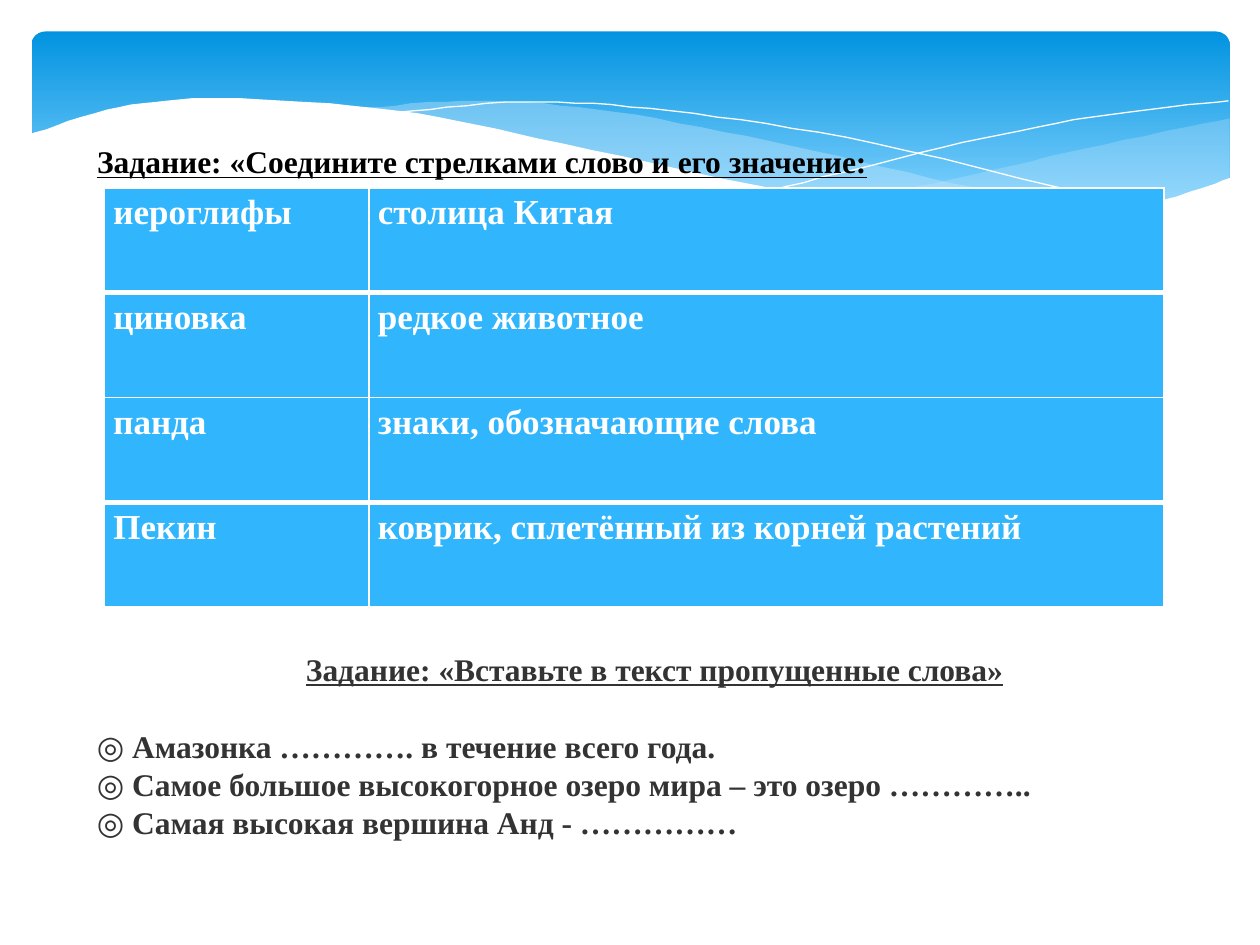
"""Build a quiz slide with a matching table, a gap-fill list and a wave banner."""
from dataclasses import dataclass
from typing import Optional

from lxml import etree
from pptx import Presentation
from pptx.dml.color import RGBColor
from pptx.enum import shapes as kinds, text as txt
from pptx.oxml import ns
from pptx.util import Inches, Pt

COLORS = {"top": "0293E0", "low": "83D3FE", "mist": "C6E7FC", "white": "FFFFFF",
          "cell": "31B6FD", "black": "000000", "gray": "333333"}
FONT = "Times New Roman"
UNIT = Inches(0.01)
STEPS = 8


@dataclass
class Wave:
    """Smooth arcs through knots in hundredths of an inch."""
    arcs: list
    fill: Optional[str] = None
    alpha: int = 100


@dataclass
class Note:
    """A text block: each line is a list of (text, format) runs."""
    box: tuple
    lines: list
    align: object = txt.PP_ALIGN.LEFT


WAVES = [
    Wave([[(976, 94), (861, 118), (753, 143), (661, 160)],
          [(661, 160), (757, 170), (854, 170), (921, 160), (976, 141)]], "mist", 29),
    Wave([[(893, 167), (775, 149), (629, 116), (489, 89), (380, 80), (286, 86)],
          [(286, 86), (404, 106), (566, 143), (695, 165), (807, 173), (893, 167)]], "mist", 40),
    Wave([[(309, 90), (416, 81), (533, 88), (695, 114), (907, 166)]]),
    Wave([[(613, 151), (748, 117), (866, 93), (975, 80)]]),
    Wave([[(977, 141), (899, 164), (793, 171), (648, 156), (447, 114), (316, 88),
           (177, 78), (95, 85), (23, 107)], [(23, 224), (977, 224)]], "white"),
]
PAIRS = [("иероглифы", "столица Китая"), ("циновка", "редкое животное"),
         ("панда", "знаки, обозначающие слова"),
         ("Пекин", "коврик, сплетённый из корней растений")]
GAPS = ["Амазонка …………. в течение всего года.",
        "Самое большое высокогорное озеро мира – это озеро …………..",
        "Самая высокая вершина Анд - ……………"]
HEAD = {"bold": True, "underline": True}
TITLE = Note((0.67, 1.08, 6.42, 0.4),
             [[("Задание: «Соедините стрелками слово и его значение:", HEAD)]],
             txt.PP_ALIGN.JUSTIFY)
NOTES = [
    Note((2.33, 5.11, 7.17, 0.4), [[("Задание: «Вставьте в текст пропущенные слова»", HEAD)]]),
    Note((0.67, 5.72, 8.67, 1.01),
         [[("◎ ", {"bold": False}), (gap, {"bold": True})] for gap in GAPS]),
]


def rgb(name: str) -> RGBColor:
    """Look up a colour."""
    return RGBColor.from_string(COLORS[name])


def style(font, color: str, size: int, form: dict) -> None:
    """Format a font."""
    for key, val in {"name": FONT, "size": Pt(size), **form}.items():
        setattr(font, key, val)
    font.color.rgb = rgb(color)


def place(shape, box: tuple) -> None:
    """Move and size a shape."""
    for key, val in zip(("left", "top", "width", "height"), box):
        setattr(shape, key, Inches(val))


def banner(slide) -> None:
    """Draw the rounded gradient band."""
    band = slide.shapes.add_shape(kinds.MSO_SHAPE.ROUNDED_RECTANGLE,
                                  *map(Inches, (0.25, 0.25, 9.51, 1.56)))
    band.adjustments[0] = 0.07
    band.shadow.inherit = False
    band.line.fill.background()
    band.fill.gradient()
    band.fill.gradient_angle = 270
    for stop, name, pos in zip(band.fill.gradient_stops, ("top", "low"), (0, 0.9)):
        stop.color.rgb = rgb(name)
        stop.position = pos


def blend(a: float, b: float, c: float, d: float, t: float) -> float:
    """Give the Catmull-Rom value between b and c."""
    return b + t / 2 * (c - a + t * (2 * a - 5 * b + 4 * c - d + t * (3 * (b - c) + d - a)))


def smooth(knots: list) -> list:
    """Sample a curve that passes through the knots."""
    ends = [knots[0], *knots, knots[-1]]
    pts = [tuple(blend(*axis, step / STEPS) for axis in zip(*quad))
           for quad in zip(ends, ends[1:], ends[2:], ends[3:]) for step in range(STEPS)]
    return pts + [knots[-1]]


def wave(slide, item: Wave) -> None:
    """Draw a filled wave or a thin white curve."""
    pts = [pt for arc in item.arcs for pt in smooth(arc)]
    pen = slide.shapes.build_freeform(*pts[0], scale=UNIT)
    pen.add_line_segments(pts[1:], close=bool(item.fill))
    shape = pen.convert_to_shape()
    shape.shadow.inherit = False
    if not item.fill:
        shape.fill.background()
        shape.line.color.rgb = rgb("white")
        shape.line.width = 0
        return
    shape.line.fill.background()
    shape.fill.solid()
    shape.fill.fore_color.rgb = rgb(item.fill)
    if item.alpha < 100:
        tone = shape._element.spPr.find(".//" + ns.qn("a:srgbClr"))
        etree.SubElement(tone, ns.qn("a:alpha"), val=str(item.alpha * 1000))


def edge(cell, side: str, width: int) -> None:
    """Give one side of a cell a white border."""
    line = etree.SubElement(cell._tc.get_or_add_tcPr(), ns.qn("a:ln" + side),
                            w=str(Pt(width)))
    fill = etree.SubElement(line, ns.qn("a:solidFill"))
    etree.SubElement(fill, ns.qn("a:srgbClr"), val=COLORS["white"])


def grid(slide) -> None:
    """Draw the table of words and meanings."""
    table = slide.shapes.add_table(len(PAIRS), 2, *map(Inches, (0.83, 1.49, 8.41, 3.33))).table
    for col, width in zip(table.columns, (2.1, 6.31)):
        col.width = Inches(width)
    rules = (1, 3, 1, 3, 1)
    pad = {"margin_left": Inches(0.07), "margin_right": Inches(0.07),
           "margin_top": 0, "margin_bottom": 0}
    for row, pair in enumerate(PAIRS):
        for col, word in enumerate(pair):
            cell = table.cell(row, col)
            for key, val in pad.items():
                setattr(cell, key, val)
            for side, width in zip("LRTB", (1, 1, rules[row], rules[row + 1])):
                edge(cell, side, width)
            cell.fill.solid()
            cell.fill.fore_color.rgb = rgb("cell")
            para = cell.text_frame.paragraphs[0]
            para.alignment = txt.PP_ALIGN.JUSTIFY
            para.line_spacing = 1.15
            run = para.add_run()
            run.text = word
            style(run.font, "white", 20, {"bold": True})


def write(shape, note: Note, color: str) -> None:
    """Place a text shape and fill it."""
    place(shape, note.box)
    frame = shape.text_frame
    form = {"word_wrap": True, "auto_size": txt.MSO_AUTO_SIZE.NONE,
            "vertical_anchor": txt.MSO_ANCHOR.TOP}
    for key, val in form.items():
        setattr(frame, key, val)
    for num, line in enumerate(note.lines):
        para = frame.add_paragraph() if num else frame.paragraphs[0]
        para.alignment = note.align
        for words, look in line:
            run = para.add_run()
            run.text = words
            style(run.font, color, 18, look)


def main() -> None:
    """Build and save the deck."""
    deck = Presentation()
    deck.slide_width, deck.slide_height = Inches(10), Inches(7.5)
    slide = deck.slides.add_slide(deck.slide_layouts[5])
    banner(slide)
    for item in WAVES:
        wave(slide, item)
    grid(slide)
    title = slide.shapes.title
    write(title, TITLE, "black")
    slide.shapes._spTree.append(title._element)
    for note in NOTES:
        write(slide.shapes.add_textbox(0, 0, 0, 0), note, "gray")
    deck.save("out.pptx")


if __name__ == "__main__":
    main()
